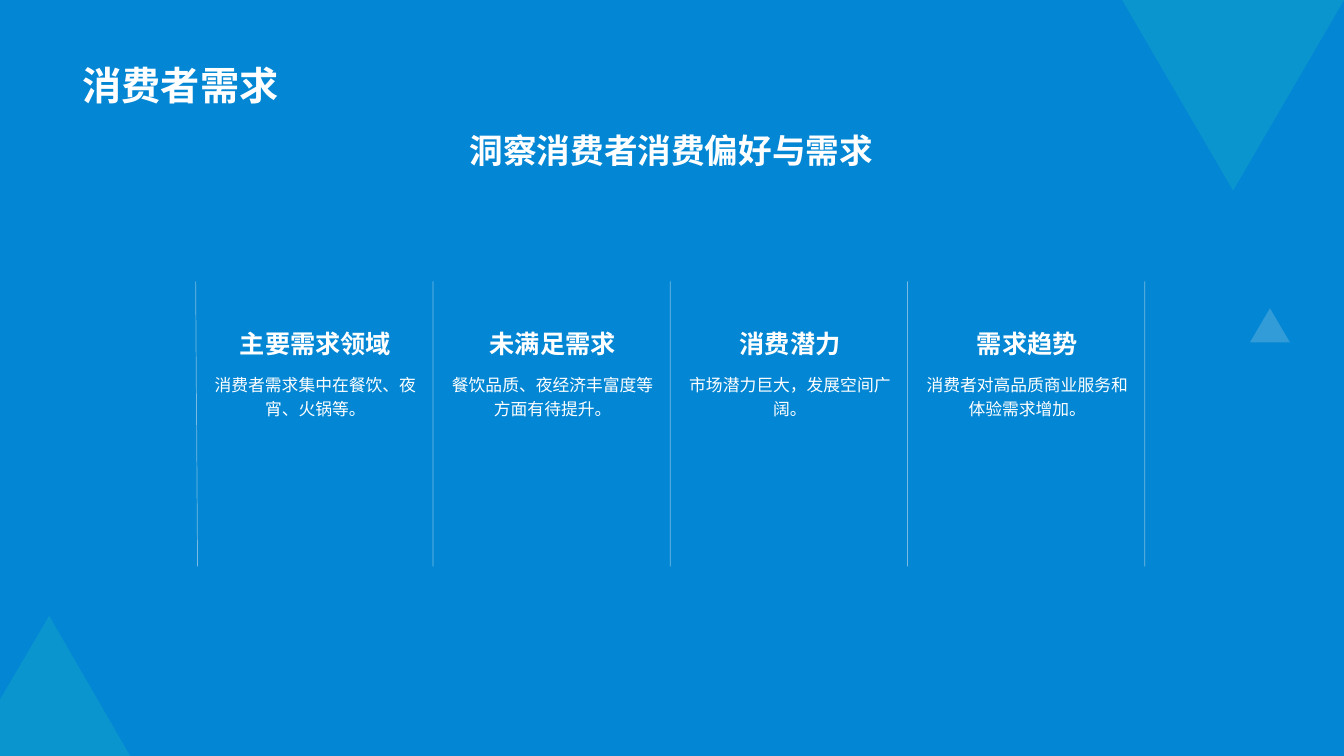
"""Builds the consumer demand slide: four demand columns between thin dividers."""
from dataclasses import dataclass

from lxml import etree
from pptx import Presentation
from pptx import util as u
from pptx.dml.color import RGBColor
from pptx.enum import shapes, text
from pptx.oxml.ns import qn


@dataclass(frozen=True)
class Theme:
    font: str = "Arial"
    background: RGBColor = RGBColor(0x03, 0x87, 0xD4)
    ink: RGBColor = RGBColor(0xFF, 0xFF, 0xFF)
    teal: RGBColor = RGBColor(0x2A, 0xCF, 0xBA)
    pale: RGBColor = RGBColor(0xF0, 0xF0, 0xF0)
    title: int = 28
    subtitle: int = 24
    heading: int = 18
    detail: int = 12


theme = Theme()


def write(holder, words, size, bold=True, align=text.PP_ALIGN.CENTER,
          anchor=text.MSO_ANCHOR.TOP, spacing=1.0):
    frame = holder.text_frame
    frame.word_wrap = True
    frame.auto_size = text.MSO_AUTO_SIZE.NONE
    frame.vertical_anchor = anchor
    frame.text = words
    paragraph = frame.paragraphs[0]
    paragraph.alignment = align
    paragraph.line_spacing = spacing
    paragraph.font.size = u.Pt(size)
    paragraph.font.bold = bold
    paragraph.font.color.rgb = theme.ink
    paragraph.font.name = theme.font
    defaults = paragraph._p.pPr.find(qn("a:defRPr"))
    etree.SubElement(defaults, qn("a:ea")).set("typeface", theme.font)


def tint(fill_owner, color, opacity):
    fill_owner.fill.solid()
    fill_owner.fill.fore_color.rgb = color
    color_node = next(fill_owner.fill._xPr.iter(qn("a:srgbClr")))
    etree.SubElement(color_node, qn("a:alpha")).set("val", str(opacity * 1000))


deck = Presentation()
deck.slide_width, deck.slide_height = u.Cm(33.87), u.Cm(19.05)
slide = deck.slides.add_slide(deck.slide_layouts[5])
slide.background.fill.solid()
slide.background.fill.fore_color.rgb = theme.background

title = slide.shapes.title
title.left, title.top, title.width, title.height = map(u.Cm, (1.83, 0.36, 30.18, 2.49))
write(title, "消费者需求", theme.title, align=text.PP_ALIGN.LEFT,
      anchor=text.MSO_ANCHOR.BOTTOM)

triangles = [
    ((28.28, 0, 5.59, 4.8), 180, theme.teal),
    ((31.5, 7.77, 1.01, 0.86), 0, theme.pale),
]
for place, turn, color in triangles:
    triangle = slide.shapes.add_shape(
        shapes.MSO_SHAPE.ISOSCELES_TRIANGLE, *map(u.Cm, place))
    triangle.rotation = turn
    triangle.shadow.inherit = False
    triangle.line.fill.background()
    tint(triangle, color, 20)

corner_outline = slide.shapes.build_freeform(u.Cm(1.24), u.Cm(15.52))
corner_outline.add_line_segments(
    [(u.Cm(x), u.Cm(y)) for x, y in [(3.28, 19.05), (0, 19.05), (0, 17.63)]])
corner = corner_outline.convert_to_shape()
corner.shadow.inherit = False
corner.line.fill.background()
tint(corner, theme.teal, 20)

first_divider, pitch = 4.93, 5.98
columns_top, columns_bottom = 7.09, 14.27
for index in range(5):
    x = first_divider + index * pitch
    lean = 0.05 if index == 0 else 0
    divider = slide.shapes.add_connector(
        shapes.MSO_CONNECTOR.STRAIGHT, u.Cm(x), u.Cm(columns_top),
        u.Cm(x + lean), u.Cm(columns_bottom))
    divider.line.width = u.Pt(0.5)
    tint(divider.line, theme.pale, 50)
    etree.SubElement(divider._element.spPr, qn("a:effectLst"))

demands = [
    ("主要需求领域", "消费者需求集中在餐饮、夜宵、火锅等。"),
    ("未满足需求", "餐饮品质、夜经济丰富度等方面有待提升。"),
    ("消费潜力", "市场潜力巨大，发展空间广阔。"),
    ("需求趋势", "消费者对高品质商业服务和体验需求增加。"),
]
column_width = u.Cm(5.6)
for index, (name, explanation) in enumerate(demands):
    left = u.Cm(first_divider + 0.22 + index * pitch)
    detail = slide.shapes.add_textbox(left, u.Cm(9.22), column_width, u.Cm(5.05))
    write(detail, explanation, theme.detail, bold=False, spacing=1.2)
    heading = slide.shapes.add_textbox(left, u.Cm(columns_top), column_width, u.Cm(2.08))
    write(heading, name, theme.heading, anchor=text.MSO_ANCHOR.BOTTOM)

subtitle = slide.shapes.add_textbox(*map(u.Cm, (1.83, 3.15, 30.18, 2.08)))
write(subtitle, "洞察消费者消费偏好与需求", theme.subtitle)

deck.save("out.pptx")
